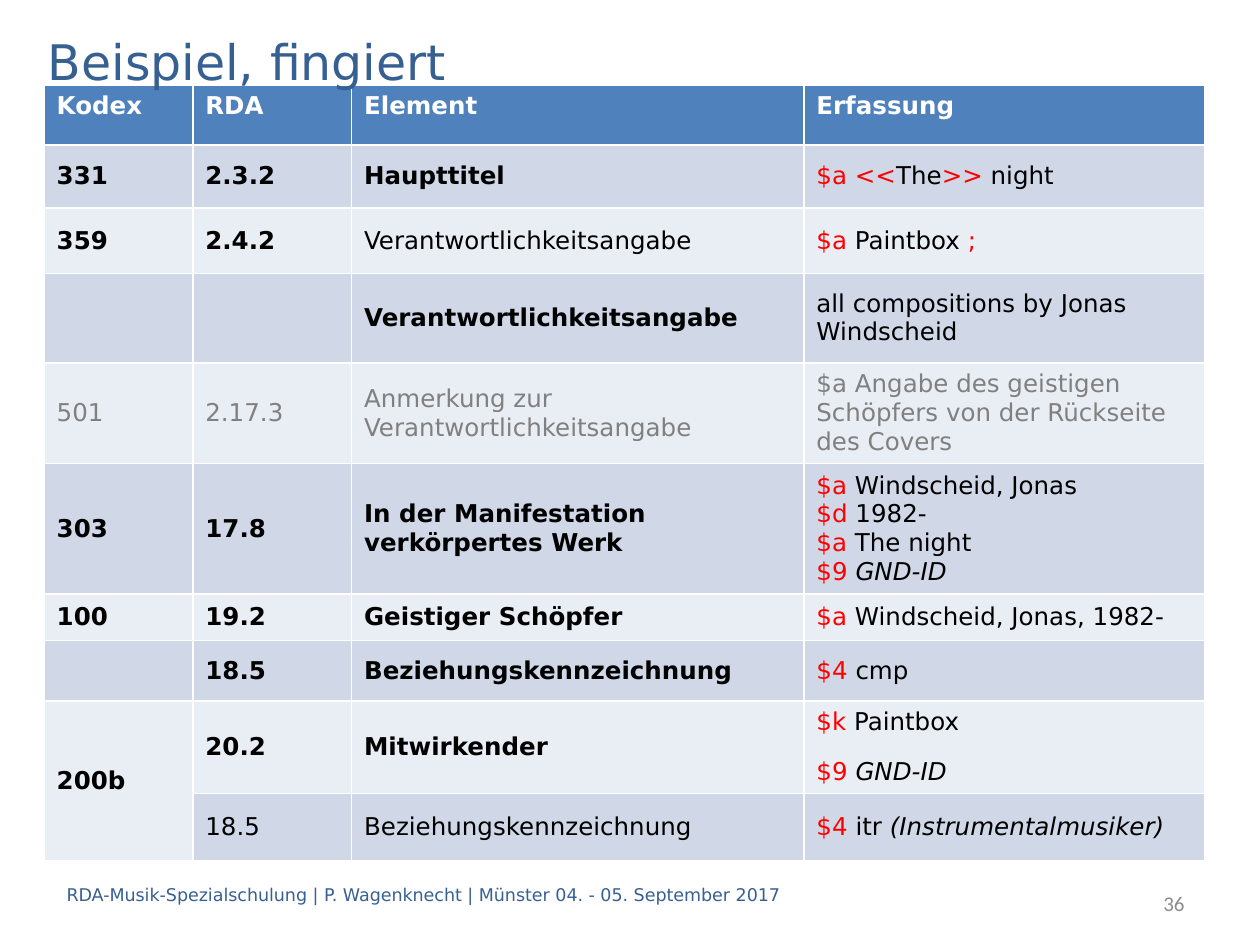
import pptx
import pptx.dml.color
import pptx.enum.text
import pptx.util

Inches, Pt = pptx.util.Inches, pptx.util.Pt
ALIGN = pptx.enum.text.PP_ALIGN
ANCHOR = pptx.enum.text.MSO_ANCHOR

COLORS = {
    "title": "376092", "number": "8C8C8C", "header": "4F81BD",
    "odd": "D0D8E8", "even": "E9EDF4", "white": "FFFFFF",
    "text": "000000", "code": "FF0000", "muted": "808080",
}
COLUMNS = [1.18, 1.26, 3.59, 3.18]
HEIGHTS = [0.47, 0.5, 0.52, 0.71, 0.71, 0.71, 0.37, 0.48, 0.55, 0.53]
MUTED_ROW = 4
ROWS = [
    ["*Kodex", "*RDA", "*Element", "*Erfassung"],
    ["*331", "*2.3.2", "*Haupttitel", "~$a <<~The~>> ~night"],
    ["*359", "*2.4.2", "Verantwortlichkeitsangabe", "~$a ~Paintbox ~;~"],
    ["", "", "*Verantwortlichkeitsangabe", "all compositions by Jonas Windscheid"],
    ["501", "2.17.3", "Anmerkung zur Verantwortlichkeitsangabe",
     "$a Angabe des geistigen Schöpfers von der Rückseite des Covers"],
    ["*303", "*17.8", "*In der Manifestation verkörpertes Werk",
     "~$a ~Windscheid, Jonas\v~$d~ 1982-\v~$a ~The night\v~$9 ~_GND-ID_"],
    ["*100", "*19.2", "*Geistiger Schöpfer", "~$a ~Windscheid, Jonas, 1982-"],
    ["", "*18.5", "*Beziehungskennzeichnung", "~$4 ~cmp"],
    ["*200b", "*20.2", "*Mitwirkender", "~$k ~Paintbox\n~$9 ~_GND-ID_"],
    ["", "18.5", "Beziehungskennzeichnung", "~$4 ~itr _(Instrumentalmusiker)_"],
]


def rgb(name):
    """Return the named colour."""
    return pptx.dml.color.RGBColor.from_string(COLORS[name])


class SlideBuilder:
    """Holds the text style and the current slide."""

    def __init__(self, slide, font="DejaVu Sans"):
        """Keep the slide and its main font."""
        self.slide = slide
        self.font = font

    def style(self, p, size, color, bold=False, font=None):
        """Set the font of a whole paragraph."""
        p.font.name = font or self.font
        p.font.size = Pt(size)
        p.font.bold = bold
        p.font.color.rgb = rgb(color)

    def title(self, text, box):
        """Fill the title placeholder and bring it to the front."""
        sp = self.slide.shapes.title
        sp.left, sp.top, sp.width, sp.height = map(Inches, box)
        tf = sp.text_frame
        tf.text = text
        tf.vertical_anchor = ANCHOR.MIDDLE
        tf.paragraphs[0].alignment = ALIGN.LEFT
        self.style(tf.paragraphs[0], 28, "title")
        self.slide.shapes._spTree.append(sp._element)

    def text(self, text, box, size, color, align=ALIGN.LEFT, font=None):
        """Add a one-line text box."""
        tf = self.slide.shapes.add_textbox(*map(Inches, box)).text_frame
        tf.word_wrap = True
        tf.vertical_anchor = ANCHOR.MIDDLE
        p = tf.paragraphs[0]
        p.text = text
        p.alignment = align
        self.style(p, size, color, font=font)

    def marked_runs(self, p, text):
        """Add runs, with ~ toggling the code colour and _ toggling italics."""
        for i, part in enumerate(text.split("~")):
            for j, piece in enumerate(part.split("_")):
                for k, line in enumerate(piece.split("\v")):
                    if k:
                        p.add_line_break()
                    if not line:
                        continue
                    r = p.add_run()
                    r.text = line
                    if i % 2:
                        r.font.color.rgb = rgb("code")
                    if j % 2:
                        r.font.italic = True

    def cell(self, cell, text, fill, color, spacing):
        """Fill one table cell, in bold if its text starts with *."""
        cell.fill.solid()
        cell.fill.fore_color.rgb = rgb(fill)
        cell.vertical_anchor = ANCHOR.MIDDLE if spacing else ANCHOR.TOP
        tf = cell.text_frame
        for n, line in enumerate(text.lstrip("*").split("\n")):
            p = tf.add_paragraph() if n else tf.paragraphs[0]
            p.space_before = p.space_after = Pt(spacing)
            self.style(p, 14, color, text.startswith("*"))
            self.marked_runs(p, line)

    def table(self, rows, left, top):
        """Add the banded table with its header row."""
        table = self.slide.shapes.add_table(
            len(rows), len(COLUMNS), Inches(left), Inches(top),
            Inches(sum(COLUMNS)), Inches(sum(HEIGHTS))).table
        for column, width in zip(table.columns, COLUMNS):
            column.width = Inches(width)
        for n, (row, height) in enumerate(zip(rows, HEIGHTS)):
            table.rows[n].height = Inches(height)
            fill = "odd" if n % 2 else "even"
            color = "muted" if n == MUTED_ROW else "text"
            if n == 0:
                fill, color = "header", "white"
            for cell, text in zip(table.rows[n].cells, row):
                self.cell(cell, text, fill, color, 6 if n else 0)
        table.cell(8, 0).merge(table.cell(9, 0))


def main():
    """Build the slide and save it."""
    prs = pptx.Presentation()
    prs.slide_width, prs.slide_height = Inches(10), Inches(7.5)
    s = SlideBuilder(prs.slides.add_slide(prs.slide_layouts[5]))
    s.text("36", (7.91, 6.97, 1.59, 0.4), 12, "number", ALIGN.RIGHT, "Calibri")
    s.table(ROWS, 0.35, 0.68)
    s.title("Beispiel, fingiert", (0.28, 0.2, 9.45, 0.56))
    s.text("RDA-Musik-Spezialschulung | P. Wagenknecht | Münster 04. - 05. September 2017",
           (0.43, 6.9, 8.74, 0.4), 10, "title")
    prs.save("out.pptx")


if __name__ == "__main__":
    main()
